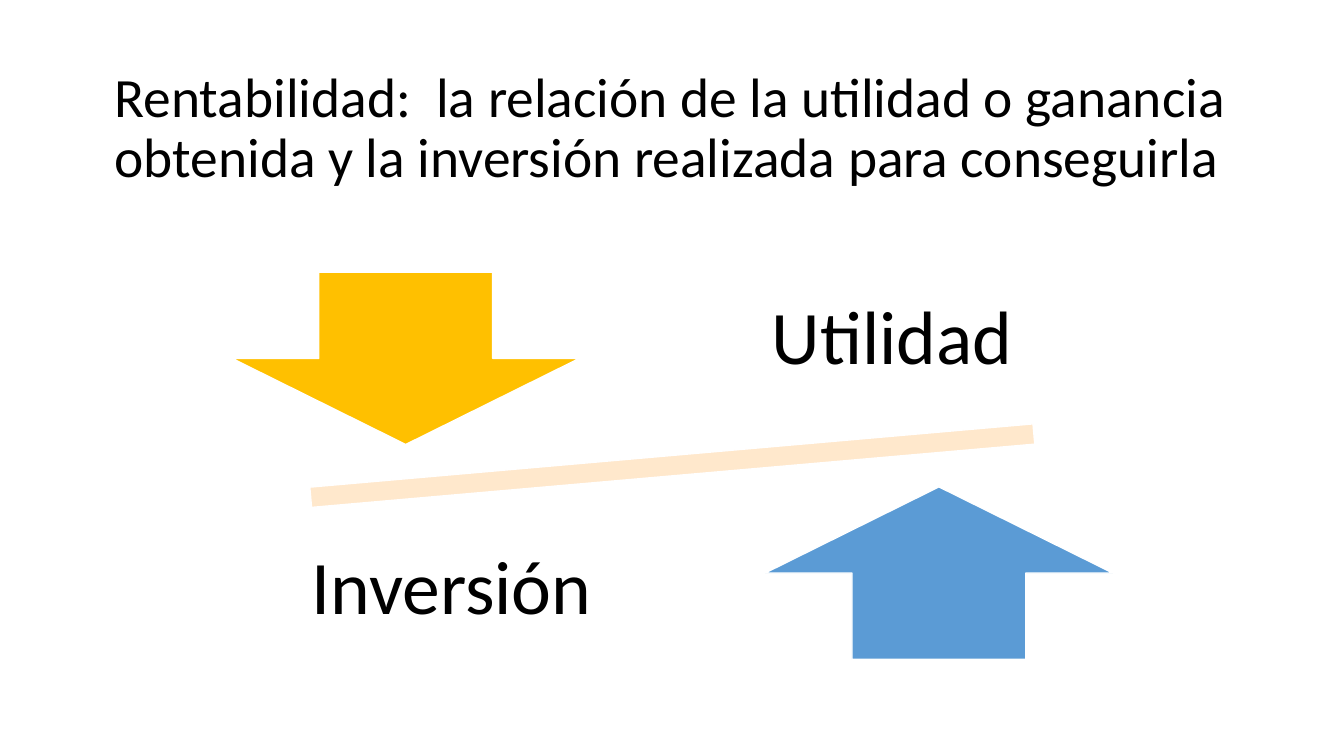
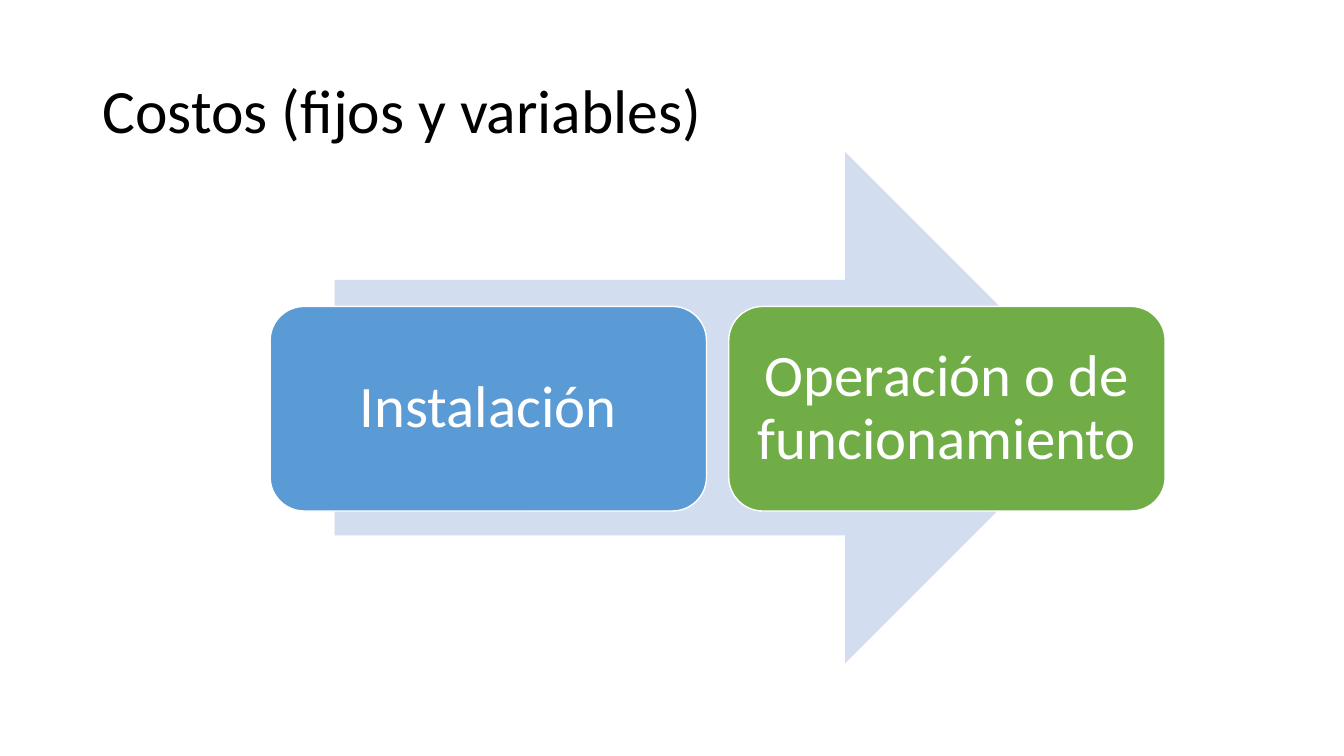
from pptx import Presentation
from pptx.dml.color import RGBColor
from pptx.enum.shapes import MSO_SHAPE as SHAPE
from pptx.enum.text import MSO_ANCHOR as ANCHOR, PP_ALIGN as ALIGN
from pptx.util import Emu, Pt

PX = 9144  # 100 px to the inch
FONT = "Calibri"
BLACK, WHITE = "000000", "FFFFFF"
BLUE, PALE_BLUE, GREEN = "5B9BD5", "D2DEEF", "70AD47"
GOLD, CREAM = "FFC000", "FFE8CC"
TITLE_WIDTH, TITLE_HEIGHT = 1150, 145


def add_text(slide, text, box, shape=None, size=44, color=BLACK, align=ALIGN.LEFT, inset=(10, 5)):
    """Write centred-height text into a shape, or into a new text box."""
    if shape is None:
        shape = slide.shapes.add_textbox(*(Emu(value * PX) for value in box))
    frame = shape.text_frame
    frame.word_wrap = True
    frame.vertical_anchor = ANCHOR.MIDDLE
    frame.margin_left = frame.margin_right = Emu(inset[0] * PX)
    frame.margin_top = frame.margin_bottom = Emu(inset[1] * PX)
    paragraph = frame.paragraphs[0]
    paragraph.alignment = align
    paragraph.line_spacing = 0.9
    run = paragraph.add_run()
    run.text = text
    run.font.name = FONT
    run.font.size = Pt(size)
    run.font.color.rgb = RGBColor.from_string(color)


def add_block(slide, kind, box, fill, outlined=True, rotation=0):
    """Add a flat preset shape, with a thin white outline if wanted."""
    shape = slide.shapes.add_shape(kind, *(Emu(value * PX) for value in box))
    shape.shadow.inherit = False
    shape.rotation = rotation
    shape.fill.solid()
    shape.fill.fore_color.rgb = RGBColor.from_string(fill)
    if outlined:
        shape.line.color.rgb = RGBColor.from_string(WHITE)
        shape.line.width = Pt(1)
    else:
        shape.line.fill.background()
    return shape


presentation = Presentation()
presentation.slide_width = Emu(12192000)
presentation.slide_height = Emu(750 * PX)
blank = presentation.slide_layouts[6]

# Slide 1: profitability as a balance
slide = presentation.slides.add_slide(blank)
add_text(
    slide,
    "Rentabilidad:  la relación de la utilidad o ganancia obtenida y la inversión realizada para conseguirla",
    (104, 56, TITLE_WIDTH, TITLE_HEIGHT),
    size=39.6,
)
add_block(slide, SHAPE.MATH_MINUS, (177, 419, 980, 86), CREAM, rotation=355)

# Each side of the balance: arrow and label
for kind, arrow_left, arrow_top, fill, label, label_left, label_top in (
    (SHAPE.DOWN_ARROW, 230, 270, GOLD, "Utilidad", 701, 248),
    (SHAPE.UP_ARROW, 759, 483, BLUE, "Inversión", 264, 496),
):
    add_block(slide, kind, (arrow_left, arrow_top, 345, 171), fill)
    add_text(slide, label, (label_left, label_top, 368, 179), size=54, align=ALIGN.CENTER, inset=(42, 42))

# Slide 2: kinds of cost along an arrow
slide = presentation.slides.add_slide(blank)
add_text(slide, "Costos (fijos y variables)", (92, 40, TITLE_WIDTH, TITLE_HEIGHT))
add_block(slide, SHAPE.RIGHT_ARROW, (332, 151, 760, 507), PALE_BLUE, outlined=False)

# Cost cards
card_left, card_width, card_gap = 268, 433, 22
for index, (label, fill) in enumerate((("Instalación", BLUE), ("Operación o de funcionamiento", GREEN))):
    box = (card_left + index * (card_width + card_gap), 304, card_width, 203)
    card = add_block(slide, SHAPE.ROUNDED_RECTANGLE, box, fill)
    add_text(slide, label, box, shape=card, size=42, color=WHITE, align=ALIGN.CENTER, inset=(17, 17))

presentation.save("out.pptx")
